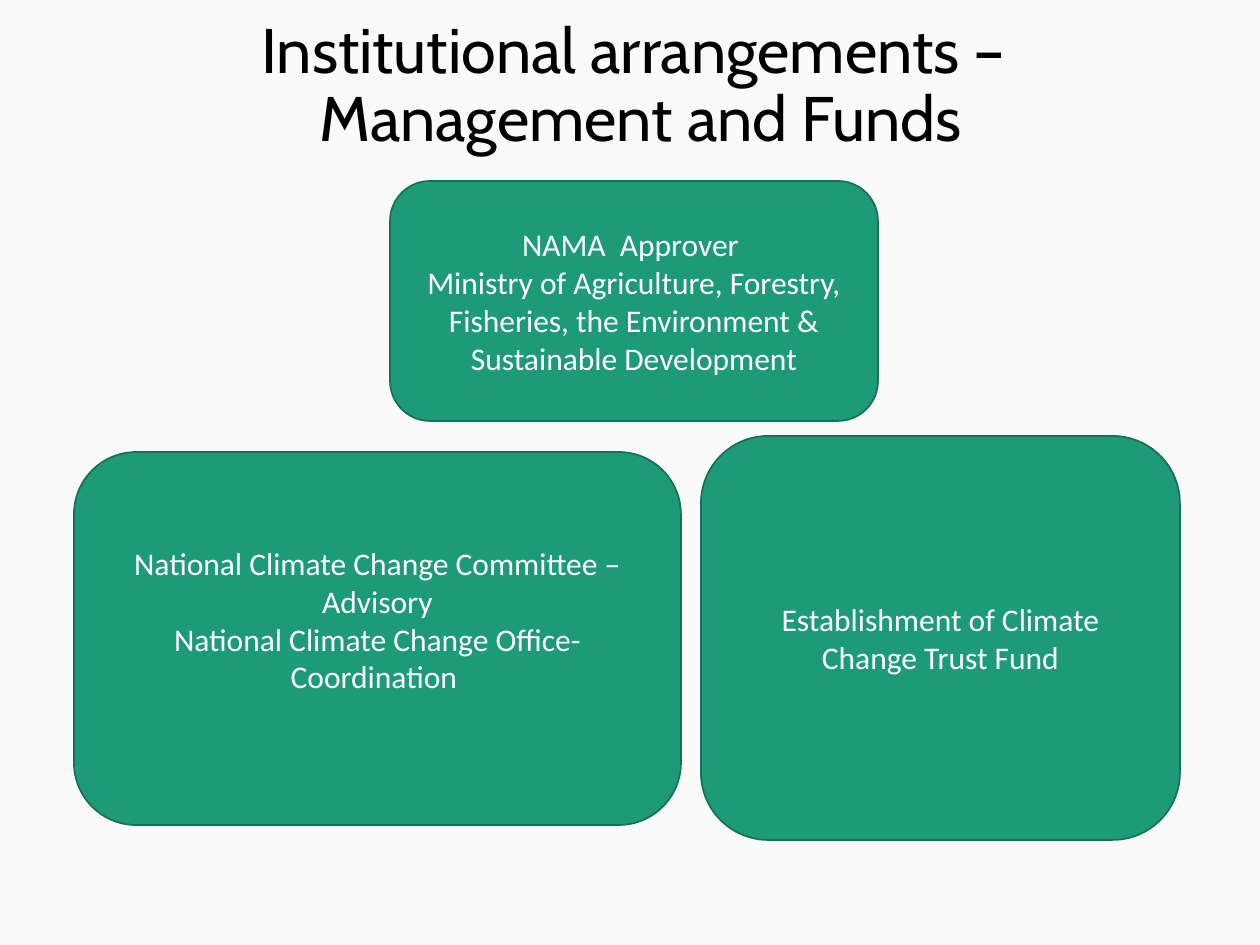
from pptx import Presentation
from pptx.dml.color import RGBColor
from pptx.enum.shapes import MSO_SHAPE
from pptx.enum.text import MSO_ANCHOR, PP_ALIGN
from pptx.util import Emu, Pt

PX = 914400 // 126
BACKGROUND = RGBColor(0xFA, 0xFA, 0xFA)
BLACK = RGBColor(0x00, 0x00, 0x00)
WHITE = RGBColor(0xFF, 0xFF, 0xFF)
GREEN = RGBColor(0x1D, 0x9A, 0x78)
DARK_GREEN = RGBColor(0x15, 0x72, 0x59)

TITLE = "Institutional arrangements – \vManagement and Funds"
TITLE_BOX = (21, 13, 1239, 149)
INSET = 6
LINE_HEIGHT = 38

BODIES = [
    ((390, 181, 488, 240), INSET, [
        "NAMA  Approver ",
        "Ministry of Agriculture, Forestry, Fisheries, the Environment & Sustainable Development",
    ]),
    ((74, 452, 607, 373), INSET + LINE_HEIGHT, [
        "National Climate Change Committee –Advisory",
        "National Climate Change Office- Coordination ",
    ]),
    ((701, 436, 479, 404), INSET, ["Establishment of Climate Change Trust Fund"]),
]


def px(*lengths):
    """Turn pixel lengths into EMU."""
    return [Emu(length * PX) for length in lengths]


def write(shape, lines, font, size, color, spacing=1.0):
    """Fill a shape with centred paragraphs."""
    frame = shape.text_frame
    frame.word_wrap = True
    frame.vertical_anchor = MSO_ANCHOR.MIDDLE
    for index, line in enumerate(lines):
        paragraph = frame.add_paragraph() if index else frame.paragraphs[0]
        paragraph.text = line
        paragraph.alignment = PP_ALIGN.CENTER
        paragraph.line_spacing = spacing
        paragraph.font.name = font
        paragraph.font.size = Pt(size)
        paragraph.font.color.rgb = color


def add_body(slide, box, bottom_inset, lines):
    """Draw one institution as a rounded green box."""
    shape = slide.shapes.add_shape(MSO_SHAPE.ROUNDED_RECTANGLE, *px(*box))
    shape.shadow.inherit = False
    shape.fill.solid()
    shape.fill.fore_color.rgb = GREEN
    shape.line.color.rgb = DARK_GREEN
    shape.line.width = Pt(1)
    shape.text_frame.margin_bottom = px(bottom_inset)[0]
    write(shape, lines, "Calibri", 18, WHITE)


def main():
    """Build and save the slide."""
    presentation = Presentation()
    presentation.slide_width, presentation.slide_height = px(1260, 945)
    slide = presentation.slides.add_slide(presentation.slide_layouts[6])
    slide.background.fill.solid()
    slide.background.fill.fore_color.rgb = BACKGROUND
    title = slide.shapes.add_textbox(*px(*TITLE_BOX))
    write(title, [TITLE], "Cabin", 36, BLACK, 0.9)
    for body in BODIES:
        add_body(slide, *body)
    presentation.save("out.pptx")


if __name__ == "__main__":
    main()
